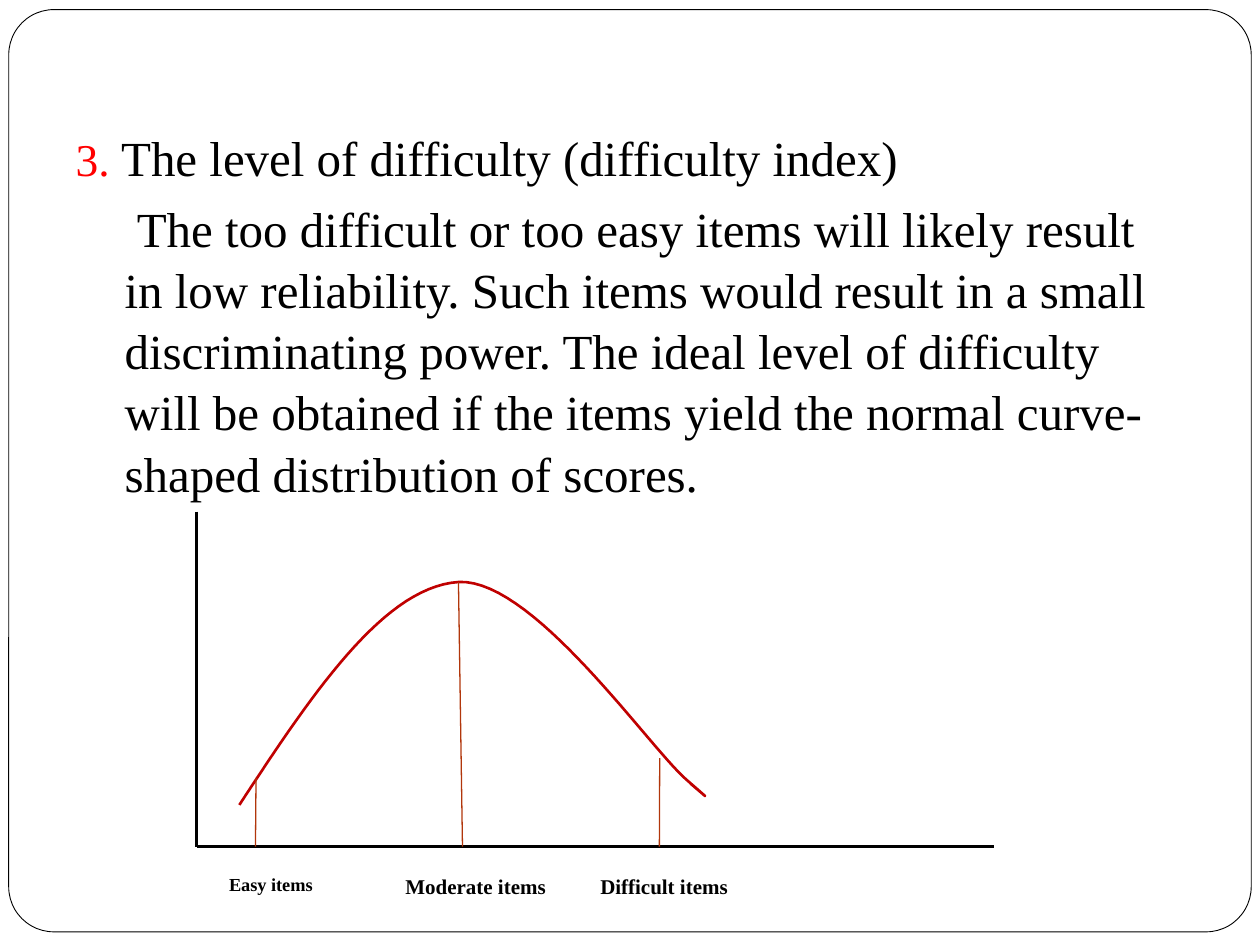
import pptx
import pptx.util
import pptx.dml.color
import pptx.enum.shapes
import pptx.enum.text
import lxml.etree

Pt = pptx.util.Pt
ALIGN = pptx.enum.text.PP_ALIGN
FACE = "Times New Roman"
BLACK, RED, CURVE, RUST = "000000", "FF0000", "C00000", "B1360B"

# Content: paragraphs as (first-line indent, runs of (text, size, colour))
BODY = [
    (-28, [("3. ", 26, RED),
           ("The level of difficulty (difficulty index)", 28, BLACK)]),
    (7, [("The too difficult or too easy items will likely result in low "
          "reliability. Such items would result in a small discriminating "
          "power. The ideal level of difficulty will be obtained if the items "
          "yield the normal curve-shaped distribution of scores.", 28, BLACK)]),
]
# Labels: text, left, width, size, alignment
LABELS = [
    ("Easy items", 103.7, 102.2, 10.5, ALIGN.CENTER),
    ("Moderate items", 224.6, 106.6, 12, ALIGN.LEFT),
    ("Difficult items", 326.2, 106.6, 12, ALIGN.CENTER),
]
# Graph: axes, drop lines as (top x, top y, foot x), and Bezier segments
LEFT, TOP, RIGHT, BASE = 112.4, 292.4, 568, 483.8
DROPS = [(262, 332.7, 264.3), (146.3, 444.5, 146), (377, 433.2, 376.8)]
START = (136.8, 460)
BENDS = [
    ((177.8, 397.5), (218.9, 335.5), (262.1, 332.6)),
    ((304.6, 330.5), (370.8, 427), (392.4, 445.7)),
    ((414.7, 465.1), (394.6, 447.8), (394.6, 447.8)),
]
STEPS = 30


def color(code):
    return pptx.dml.color.RGBColor.from_string(code)


def style(item, **values):
    for name, value in values.items():
        setattr(item, name, value)


def write(para, text, size, code, bold=False):
    run = para.add_run()
    run.text = text
    style(run.font, name=FACE, size=Pt(size), bold=bold)
    run.font.color.rgb = color(code)


def stroke(item, code, width):
    item.line.color.rgb = color(code)
    item.line.width = Pt(width)


def rule(x1, y1, x2, y2, code, width):
    line = shapes.add_connector(pptx.enum.shapes.MSO_CONNECTOR.STRAIGHT,
                                Pt(x1), Pt(y1), Pt(x2), Pt(y2))
    stroke(line, code, width)
    props = line._element.spPr
    lxml.etree.SubElement(props, pptx.oxml.ns.qn("a:effectLst"))


def bend(ends, t):
    parts = ((1 - t) ** 3, 3 * t * (1 - t) ** 2, 3 * t * t * (1 - t), t ** 3)
    return tuple(sum(p * end[axis] for p, end in zip(parts, ends))
                 for axis in (0, 1))


deck = pptx.Presentation()
style(deck, slide_width=Pt(720), slide_height=Pt(540))
slide = deck.slides.add_slide(deck.slide_layouts[1])
shapes = slide.shapes
title = shapes.title._element
title.getparent().remove(title)

# Rounded frame
frame = shapes.add_shape(pptx.enum.shapes.MSO_SHAPE.ROUNDED_RECTANGLE,
                         Pt(5), Pt(5.5), Pt(710), Pt(527))
frame.adjustments[0] = 0.049
frame.shadow.inherit = False
frame.fill.background()
stroke(frame, BLACK, 0.5)

# Body text
body = slide.placeholders[1]
style(body, left=Pt(36), top=Pt(67.7), width=Pt(648), height=Pt(455.8))
words = body.text_frame
style(words, word_wrap=True, auto_size=pptx.enum.text.MSO_AUTO_SIZE.NONE)
for n, (indent, runs) in enumerate(BODY):
    para = words.add_paragraph() if n else words.paragraphs[0]
    style(para, space_before=Pt(5.8), line_spacing=1.04)
    props = para._p.get_or_add_pPr()
    props.set("marL", str(Pt(28)))
    props.set("indent", str(Pt(indent)))
    lxml.etree.SubElement(props, pptx.oxml.ns.qn("a:buNone"))
    for run in runs:
        write(para, *run)

# Axes
rule(LEFT, TOP, LEFT, BASE, BLACK, 1.5)
rule(LEFT, BASE, RIGHT, BASE, BLACK, 1.5)

# Distribution curve
dots, last = [], START
for ends in BENDS:
    dots += [bend((last, *ends), k / STEPS) for k in range(1, STEPS + 1)]
    last = ends[-1]
pen = shapes.build_freeform(Pt(START[0]), Pt(START[1]))
pen.add_line_segments([(Pt(x), Pt(y)) for x, y in dots], close=False)
curve = pen.convert_to_shape()
curve.shadow.inherit = False
curve.fill.background()
stroke(curve, CURVE, 1.5)

# Drop lines
for x, y, foot in DROPS:
    rule(x, y, foot, BASE, RUST, 0.75)

# Labels below the axis
for text, left, width, size, align in LABELS:
    box = shapes.add_textbox(Pt(left), Pt(495.4), Pt(width), Pt(21.6))
    box.text_frame.word_wrap = True
    para = box.text_frame.paragraphs[0]
    para.alignment = align
    write(para, text, size, BLACK, bold=True)

deck.save("out.pptx")
